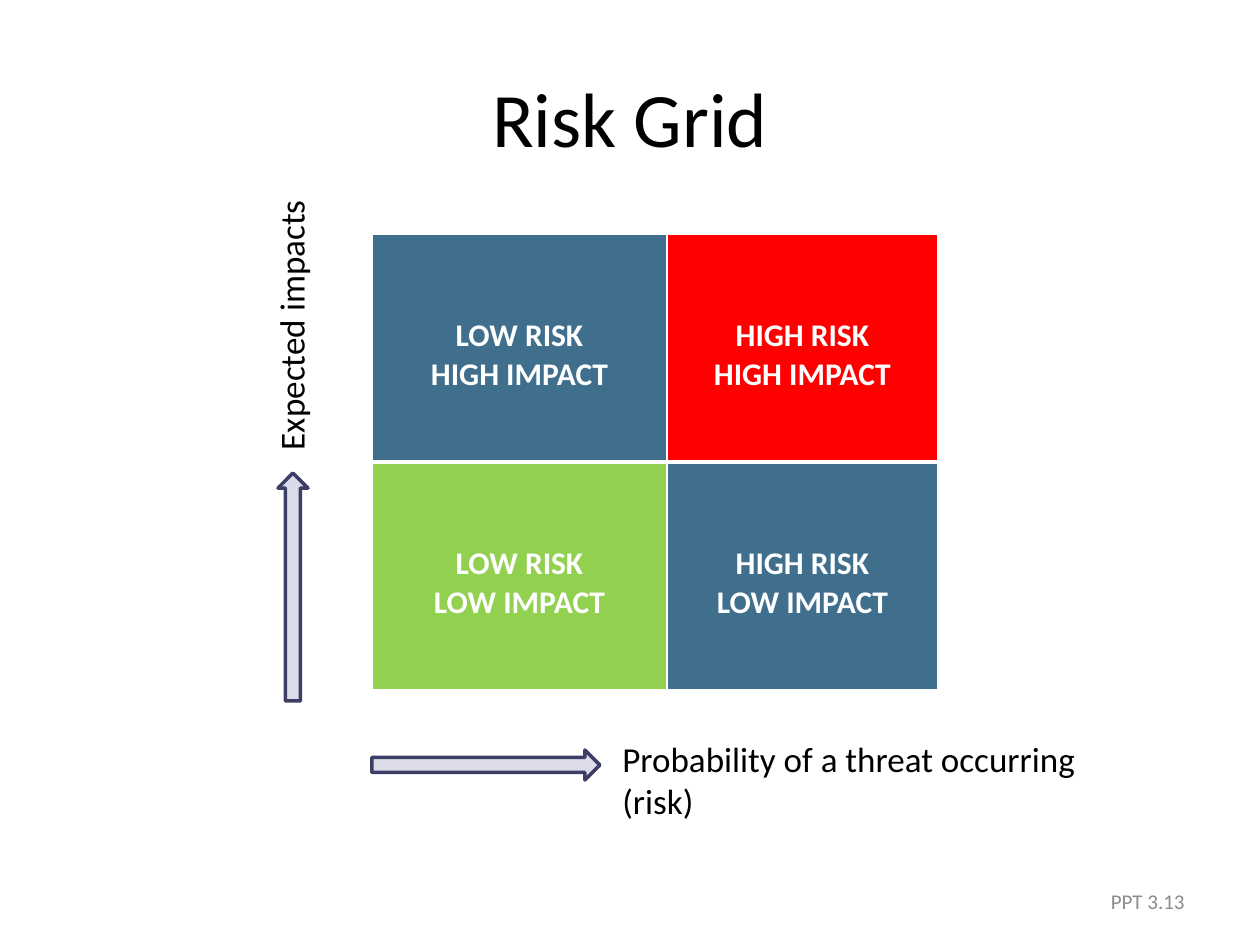
from dataclasses import dataclass

from lxml.etree import SubElement
from pptx import Presentation
from pptx.dml.color import RGBColor as RGB
from pptx.enum.shapes import MSO_SHAPE as Shape
from pptx.enum.text import MSO_ANCHOR as Anchor, PP_ALIGN as Align
from pptx.oxml.ns import qn
from pptx.util import Pt

EMU_PER_PX = 914400 / 126


@dataclass(frozen=True)
class Theme:
    font: str = "Calibri"
    black: str = "000000"
    white: str = "FFFFFF"
    grey: str = "8C8C8C"
    blue: str = "406F8D"
    red: str = "FF0000"
    green: str = "92D050"
    arrow_fill: str = "DBDBE9"
    arrow_line: str = "3D3E66"
    title_size: int = 44
    axis_size: int = 20
    cell_size: int = 18
    footer_size: int = 12


THEME = Theme()


def px(*lengths):
    return [round(length * EMU_PER_PX) for length in lengths]


def format_text(text_frame, size, color, align, bold=False):
    for paragraph in text_frame.paragraphs:
        paragraph.alignment = align
        for run in paragraph.runs:
            run.font.name = THEME.font
            run.font.size = Pt(size)
            run.font.bold = bold
            run.font.color.rgb = RGB.from_string(color)


def add_label(slide, box, text, size, color=THEME.black,
              align=Align.LEFT, anchor=Anchor.TOP, rotation=0):
    shape = slide.shapes.add_textbox(*px(*box))
    shape.rotation = rotation
    text_frame = shape.text_frame
    text_frame.word_wrap = True
    text_frame.vertical_anchor = anchor
    text_frame.text = text
    format_text(text_frame, size, color, align)


def add_arrow(slide, left, top, rotation=0):
    shape = slide.shapes.add_shape(Shape.RIGHT_ARROW, *px(left, top, 228, 30))
    shape.rotation = rotation
    shape.shadow.inherit = False
    shape.fill.solid()
    shape.fill.fore_color.rgb = RGB.from_string(THEME.arrow_fill)
    shape.line.color.rgb = RGB.from_string(THEME.arrow_line)
    shape.line.width = Pt(2)


def set_borders(cell, widths):
    """Draw white borders; widths are points for left, right, top, bottom."""
    properties = cell._tc.get_or_add_tcPr()
    for index, (side, width) in enumerate(zip("LRTB", widths)):
        line = SubElement(properties, qn(f"a:ln{side}"), w=str(Pt(width)))
        fill = SubElement(line, qn("a:solidFill"))
        SubElement(fill, qn("a:srgbClr"), val=THEME.white)
        properties.insert(index, line)  # borders come before the cell fill


def add_risk_table(slide, left, top, column_widths, row_height, rows):
    size = sum(column_widths), row_height * len(rows)
    frame = slide.shapes.add_table(len(rows), len(column_widths),
                                   *px(left, top, *size))
    table = frame.table
    table.first_row = table.horz_banding = False
    for column, width in zip(table.columns, px(*column_widths)):
        column.width = width
    for row_index, row in enumerate(rows):
        table.rows[row_index].height = px(row_height)[0]
        # The divider between the rows is thicker than the other borders
        above, below = (1, 3) if row_index == 0 else (3, 1)
        for column_index, (text, color) in enumerate(row):
            cell = table.cell(row_index, column_index)
            cell.margin_top = px(83)[0]
            cell.text_frame.text = text
            format_text(cell.text_frame, THEME.cell_size, THEME.white,
                        Align.CENTER, bold=True)
            cell.fill.solid()
            cell.fill.fore_color.rgb = RGB.from_string(color)
            set_borders(cell, (1, 1, above, below))


def main():
    presentation = Presentation()
    presentation.slide_width, presentation.slide_height = px(1260, 945)
    slide = presentation.slides.add_slide(presentation.slide_layouts[6])

    # Title
    add_label(slide, (63, 38, 1134, 158), "Risk Grid", THEME.title_size,
              align=Align.CENTER, anchor=Anchor.MIDDLE)

    # Risk and impact grid
    add_risk_table(slide, 372, 234, (295, 271), 228, (
        (("LOW RISK\nHIGH IMPACT", THEME.blue),
         ("HIGH RISK\nHIGH IMPACT", THEME.red)),
        (("LOW RISK\nLOW IMPACT", THEME.green),
         ("HIGH RISK\nLOW IMPACT", THEME.blue)),
    ))

    # Horizontal axis
    add_arrow(slide, 372, 750)
    add_label(slide, (610, 731, 515, 97),
              "Probability of a threat occurring (risk)", THEME.axis_size)

    # Vertical axis
    add_arrow(slide, 179, 572, rotation=270)
    add_label(slide, (132, 276, 318, 55), "Expected impacts",
              THEME.axis_size, rotation=270)

    # Slide number
    add_label(slide, (903, 876, 294, 50), "PPT 3.13", THEME.footer_size,
              THEME.grey, Align.RIGHT, Anchor.MIDDLE)

    presentation.save("out.pptx")


if __name__ == "__main__":
    main()
